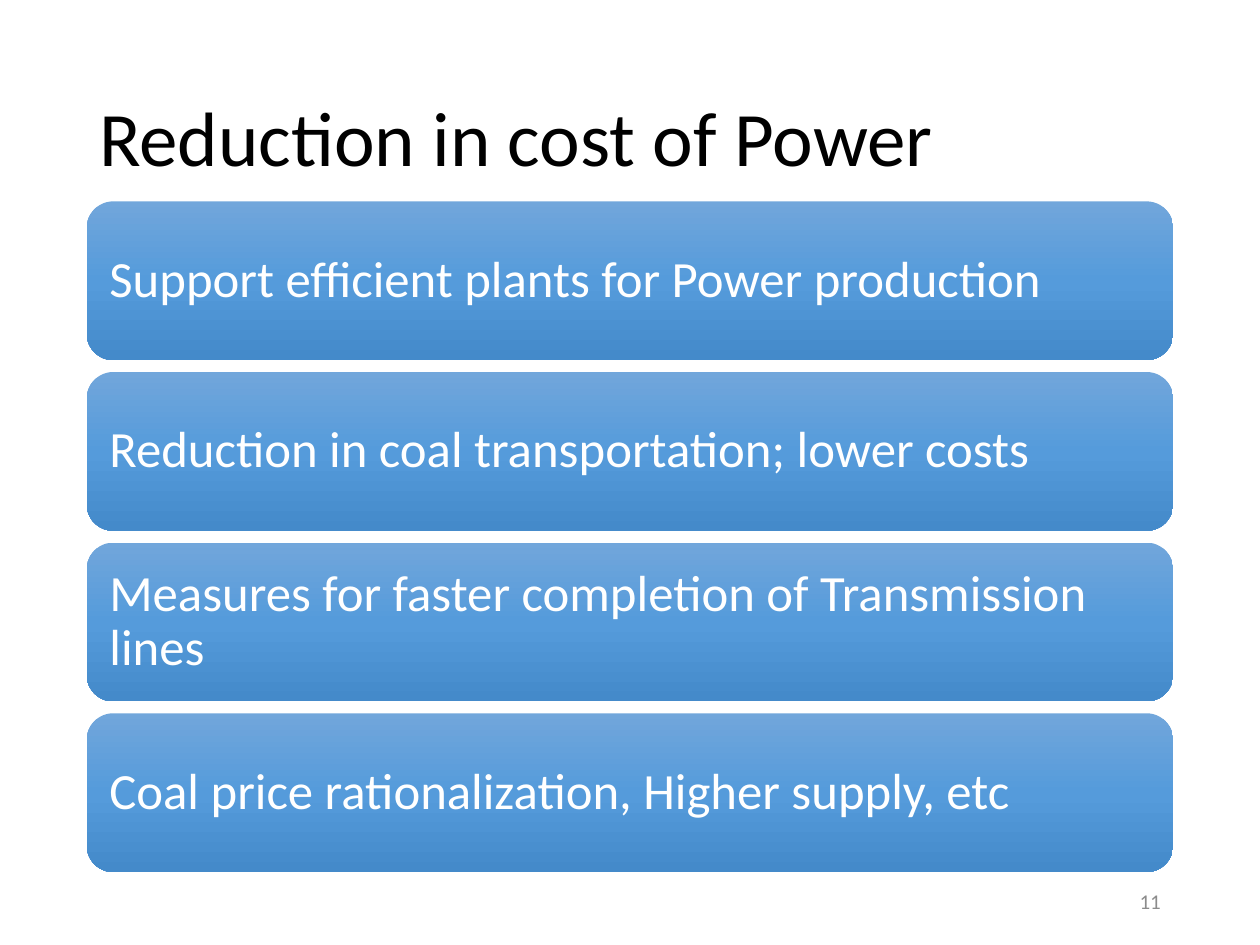
"""Build the slide on reducing the cost of power."""
import copy
from dataclasses import dataclass

import pptx
import pptx.dml.color
import pptx.enum.shapes
import pptx.enum.text
import pptx.oxml.ns
import pptx.util

Cm = pptx.util.Cm
RGB = pptx.dml.color.RGBColor.from_string
Align = pptx.enum.text.PP_ALIGN


@dataclass(frozen=True)
class Theme:
    """Colours and type sizes of the slide."""
    font: str = "Calibri"
    title_color: str = "000000"
    measure_color: str = "FFFFFF"
    number_color: str = "8C8C8C"
    gradient: tuple = ((0, "71A6DB"), (0.5, "559BDB"), (1, "448ACA"))
    title_size: int = 44
    measure_size: int = 29
    number_size: int = 12


THEME = Theme()
LEFT, WIDTH = 1.75, 21.9
FIRST_TOP, BAR_HEIGHT, BAR_PITCH = 4.06, 3.2, 3.44
MEASURES = (
    "Support efficient plants for Power production",
    "Reduction in coal transportation; lower costs",
    "Measures for faster completion of Transmission lines",
    "Coal price rationalization, Higher supply, etc",
)


def write_text(holder, wording, size, color, align=Align.LEFT, spacing=0.9):
    """Write one vertically centred paragraph into a shape."""
    frame = holder.text_frame
    frame.word_wrap = True
    frame.vertical_anchor = pptx.enum.text.MSO_ANCHOR.MIDDLE
    paragraph = frame.paragraphs[0]
    paragraph.alignment = align
    paragraph.line_spacing = spacing
    run = paragraph.add_run()
    run.text = wording
    run.font.name = THEME.font
    run.font.size = pptx.util.Pt(size)
    run.font.color.rgb = RGB(color)


def fill_gradient(bar):
    """Fill a bar from top to bottom with the theme gradient."""
    bar.fill.gradient()
    bar.fill.gradient_angle = 270
    stop_list = bar._element.spPr.find(".//" + pptx.oxml.ns.qn("a:gsLst"))
    stop_list.insert(1, copy.deepcopy(stop_list[0]))
    for stop, (position, color) in zip(bar.fill.gradient_stops, THEME.gradient):
        stop.position = position
        stop.color.rgb = RGB(color)


def add_label(slide, wording, box, size, color, **layout):
    """Add a text box at left, top, width, height in centimetres."""
    label = slide.shapes.add_textbox(*map(Cm, box))
    write_text(label, wording, size, color, **layout)


def add_measure(slide, wording, top):
    """Add one rounded bar holding a measure."""
    bar = slide.shapes.add_shape(
        pptx.enum.shapes.MSO_SHAPE.ROUNDED_RECTANGLE,
        Cm(LEFT), Cm(top), Cm(WIDTH), Cm(BAR_HEIGHT))
    bar.shadow.inherit = False
    bar.line.fill.background()
    fill_gradient(bar)
    bar.text_frame.margin_left = bar.text_frame.margin_right = Cm(0.3)
    write_text(bar, wording, THEME.measure_size, THEME.measure_color)


def main():
    """Build and save the slide."""
    deck = pptx.Presentation()
    deck.slide_width, deck.slide_height = Cm(25.4), Cm(19.05)
    slide = deck.slides.add_slide(deck.slide_layouts[6])
    add_label(slide, "Reduction in cost of Power", (LEFT, 1.02, WIDTH, 3.68),
              THEME.title_size, THEME.title_color)
    for row, measure in enumerate(MEASURES):
        add_measure(slide, measure, FIRST_TOP + row * BAR_PITCH)
    add_label(slide, "11", (17.94, 17.65, 5.71, 1.02), THEME.number_size,
              THEME.number_color, align=Align.RIGHT, spacing=1.0)
    deck.save("out.pptx")


if __name__ == "__main__":
    main()
